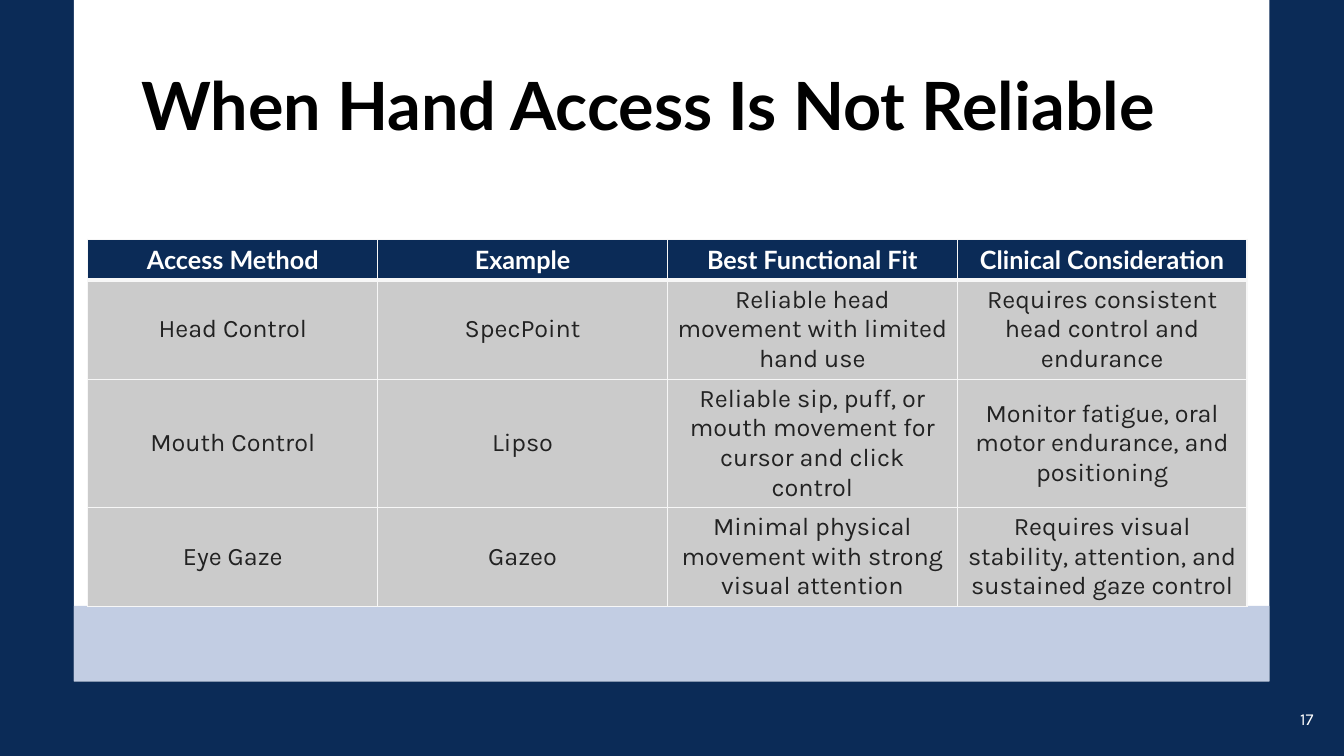
from pptx import Presentation
from pptx.dml.color import RGBColor
from pptx.enum.shapes import MSO_SHAPE
from pptx.enum.text import MSO_ANCHOR as Anchor, MSO_AUTO_SIZE as AutoSize, PP_ALIGN as Align
from pptx.oxml.ns import qn
from pptx.util import Pt
from lxml.etree import SubElement

NAVY, WHITE, PALE_BLUE = "0B2B57", "FFFFFF", "C2CDE3"
GREY, RULE, INK, BLACK = "CBCBCB", "F7F7F7", "222222", "000000"
HEADING_FONT, BODY_FONT = "Lato", "Karla"

HEADERS = ["Access Method", "Example", "Best Functional Fit", "Clinical Consideration"]
METHODS = [
    ["Head Control", "SpecPoint",
     "Reliable head movement with limited hand use",
     "Requires consistent head control and endurance"],
    ["Mouth Control", "Lipso",
     "Reliable sip, puff, or mouth movement for cursor and click control",
     "Monitor fatigue, oral motor endurance, and positioning"],
    ["Eye Gaze", "Gazeo",
     "Minimal physical movement with strong visual attention",
     "Requires visual stability, attention, and sustained gaze control"],
]
ROW_HEIGHTS = [27.5, 71, 91.5, 70.5]


def rgb(value):
    return RGBColor.from_string(value)


def style(paragraph, font_name, size, color, bold=False, align=Align.CENTER):
    paragraph.alignment = align
    font = paragraph.font
    font.name, font.size, font.bold = font_name, Pt(size), bold
    font.color.rgb = rgb(color)


def set_insets(frame, inset):
    frame.margin_left = frame.margin_right = Pt(inset)
    frame.margin_top = frame.margin_bottom = Pt(inset)


def add_band(slide, left, top, width, height, color):
    band = slide.shapes.add_shape(
        MSO_SHAPE.RECTANGLE, Pt(left), Pt(top), Pt(width), Pt(height))
    band.shadow.inherit = False
    band.fill.solid()
    band.fill.fore_color.rgb = rgb(color)
    band.line.fill.background()


def add_panel(slide, left, top, width, height, strip_height=54):
    """White page with a pale strip along its foot."""
    add_band(slide, left, top, width, height, WHITE)
    add_band(slide, left, top + height - strip_height, width, strip_height, PALE_BLUE)


def place_title(slide, text, left, top, width, height):
    title = slide.shapes.title
    title.left, title.top, title.width, title.height = map(Pt, (left, top, width, height))
    slide.shapes.element.append(title.element)  # in front of the panel
    frame = title.text_frame
    frame.text = text
    frame.auto_size = AutoSize.NONE
    frame.vertical_anchor = Anchor.MIDDLE
    set_insets(frame, 3.6)
    style(frame.paragraphs[0], HEADING_FONT, 47.5, BLACK, True, Align.LEFT)


def add_page_number(slide, number, left, top, width, height):
    box = slide.shapes.add_textbox(Pt(left), Pt(top), Pt(width), Pt(height))
    frame = box.text_frame
    frame.text = number
    frame.word_wrap = False
    frame.vertical_anchor = Anchor.MIDDLE
    set_insets(frame, 5)
    style(frame.paragraphs[0], BODY_FONT, 12, WHITE)


def set_borders(cell, **widths):
    """Draw the sides in the order the schema asks for, ahead of the cell's fill."""
    properties = cell._tc.get_or_add_tcPr()
    for side in ("L", "R", "T", "B"):
        line = SubElement(properties, qn(f"a:ln{side}"), w=str(Pt(widths.get(side, 1))))
        fill = SubElement(line, qn("a:solidFill"))
        SubElement(fill, qn("a:srgbClr"), val=RULE)


def add_methods_table(slide, left, top, width):
    rows = [HEADERS] + METHODS
    table = slide.shapes.add_table(
        len(rows), len(HEADERS), Pt(left), Pt(top), Pt(width), Pt(sum(ROW_HEIGHTS))).table
    for column in table.columns:
        column.width = Pt(width / len(HEADERS))
    for r, (texts, height) in enumerate(zip(rows, ROW_HEIGHTS)):
        table.rows[r].height = Pt(height)
        is_header = r == 0
        for c, text in enumerate(texts):
            cell = table.cell(r, c)
            cell.text = text
            cell.vertical_anchor = Anchor.MIDDLE
            set_borders(cell, T=3 if r == 1 else 1, B=3 if is_header else 1)
            cell.fill.solid()
            cell.fill.fore_color.rgb = rgb(NAVY if is_header else GREY)
            style(cell.text_frame.paragraphs[0],
                  HEADING_FONT if is_header else BODY_FONT, 18,
                  WHITE if is_header else INK, is_header)


def build_access_slide(deck):
    slide = deck.slides.add_slide(deck.slide_layouts[5])
    slide.background.fill.solid()
    slide.background.fill.fore_color.rgb = rgb(NAVY)
    add_page_number(slide, "17", 921.5, 501, 24, 24.5)
    add_panel(slide, 52.8, 0, 854, 486.8)
    place_title(slide, "When Hand Access Is Not Reliable", 97.2, 19.4, 746, 109.4)
    add_methods_table(slide, 62.8, 171, 828)


def main():
    deck = Presentation()
    deck.slide_width, deck.slide_height = Pt(960), Pt(540)
    build_access_slide(deck)
    deck.save("out.pptx")


if __name__ == "__main__":
    main()
